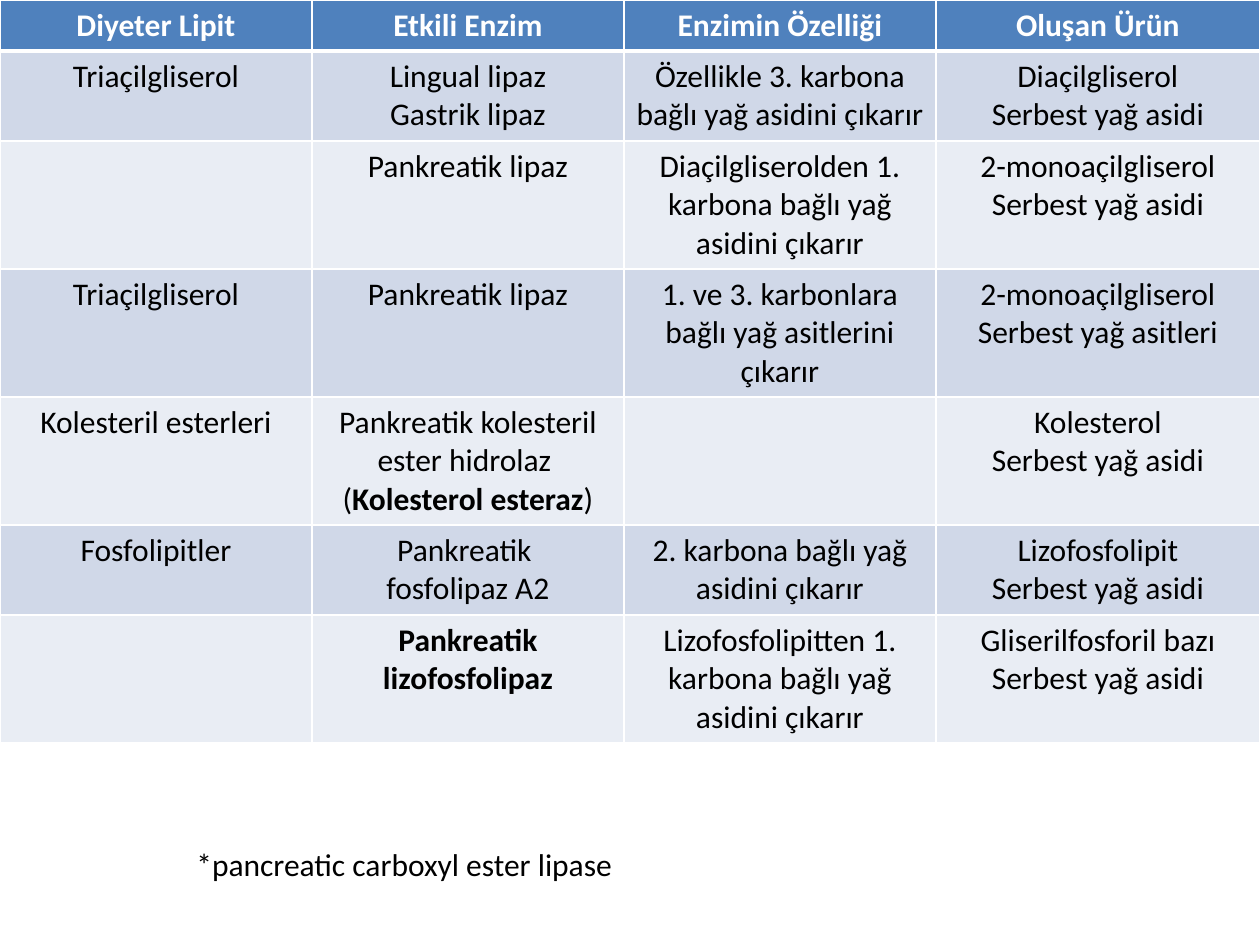
from lxml.etree import SubElement
from pptx import Presentation
from pptx.dml.color import RGBColor
from pptx.enum.text import MSO_AUTO_SIZE, PP_ALIGN
from pptx.oxml.ns import qn
from pptx.util import Pt

SCALE = 914400 / 126
WHITE = RGBColor(0xFF, 0xFF, 0xFF)
BLACK = RGBColor(0, 0, 0)
BLUE = RGBColor(0x4F, 0x81, 0xBD)
BANDS = [RGBColor(0xE9, 0xED, 0xF4), RGBColor(0xD0, 0xD8, 0xE8)]


def px(n):
    return round(n * SCALE)


def write(frame, text, color=BLACK, bold=False, align=PP_ALIGN.CENTER):
    """One paragraph a line; text between bars is bold."""
    for i, line in enumerate(text.split("\n")):
        para = frame.add_paragraph() if i else frame.paragraphs[0]
        para.alignment = align
        for j, part in enumerate(line.split("|")):
            if part:
                run = para.add_run()
                run.text = part
                run.font.name = "Calibri"
                run.font.size = Pt(18)
                run.font.bold = bold or j % 2 == 1
                run.font.color.rgb = color


ROWS = [
    (50, ["Diyeter Lipit", "Etkili Enzim", "Enzimin Özelliği", "Oluşan Ürün"]),
    (90, ["Triaçilgliserol", "Lingual lipaz\nGastrik lipaz",
          "Özellikle 3. karbona bağlı yağ asidini çıkarır",
          "Diaçilgliserol\nSerbest yağ asidi"]),
    (128, ["", "Pankreatik lipaz",
           "Diaçilgliserolden 1. karbona bağlı yağ asidini çıkarır",
           "2-monoaçilgliserol\nSerbest yağ asidi"]),
    (128, ["Triaçilgliserol", "Pankreatik lipaz",
           "1. ve 3. karbonlara bağlı yağ asitlerini çıkarır",
           "2-monoaçilgliserol\nSerbest yağ asitleri"]),
    (128, ["Kolesteril esterleri",
           "Pankreatik kolesteril ester hidrolaz \n(|Kolesterol esteraz|)",
           "", "Kolesterol\nSerbest yağ asidi"]),
    (90, ["Fosfolipitler", "Pankreatik \nfosfolipaz A2",
          "2. karbona bağlı yağ asidini çıkarır",
          "Lizofosfolipit\nSerbest yağ asidi"]),
    (128, ["", "|Pankreatik lizofosfolipaz|",
           "Lizofosfolipitten 1. karbona bağlı yağ asidini çıkarır",
           "Gliserilfosforil bazı\nSerbest yağ asidi"]),
]
WIDTHS = [312, 312, 312, 324]

deck = Presentation()
deck.slide_width = px(1260)
deck.slide_height = px(945)
slide = deck.slides.add_slide(deck.slide_layouts[6])

high = sum(height for height, _ in ROWS)
table = slide.shapes.add_table(
    len(ROWS), len(WIDTHS), 0, 0, px(sum(WIDTHS)), px(high)).table
for col, width in zip(table.columns, WIDTHS):
    col.width = px(width)

for r, (height, texts) in enumerate(ROWS):
    table.rows[r].height = px(height)
    head = r == 0
    for c, text in enumerate(texts):
        cell = table.cell(r, c)
        write(cell.text_frame, text, color=WHITE if head else BLACK, bold=head)
        # Borders come before the fill in the cell properties
        props = cell._tc.get_or_add_tcPr()
        for side in ("lnL", "lnR", "lnT", "lnB"):
            thick = (head and side == "lnB") or (r == 1 and side == "lnT")
            line = SubElement(props, qn("a:" + side), w=str(Pt(3 if thick else 1)))
            paint = SubElement(line, qn("a:solidFill"))
            SubElement(paint, qn("a:srgbClr"), val=str(WHITE))
        cell.fill.solid()
        cell.fill.fore_color.rgb = BLUE if head else BANDS[r % 2]

note = slide.shapes.add_textbox(px(184), px(839), px(455), px(51)).text_frame
note.word_wrap = False
note.auto_size = MSO_AUTO_SIZE.SHAPE_TO_FIT_TEXT
write(note, "*pancreatic carboxyl ester lipase", align=PP_ALIGN.LEFT)

deck.save("out.pptx")
